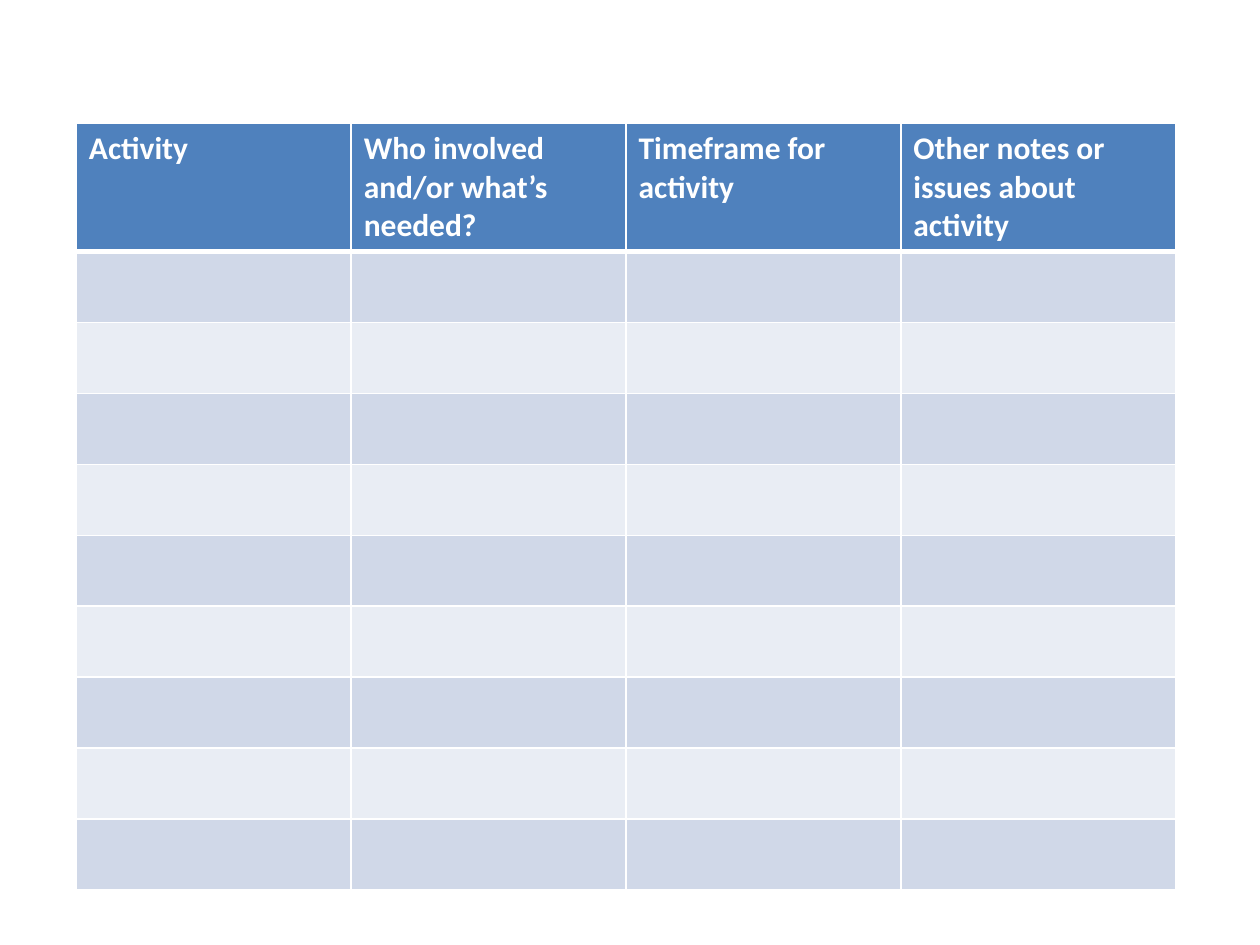
from lxml.etree import SubElement
from pptx import Presentation
from pptx.dml.color import RGBColor
from pptx.oxml.ns import qn
from pptx.util import Cm, Pt

HEADINGS = [
    "Activity",
    "Who involved and/or what’s needed?",
    "Timeframe for activity",
    "Other notes or issues about activity",
]
BODY_ROWS = 9
COLUMN_WIDTH = Cm(5.54)
HEADER_HEIGHT = Cm(2.57)
BODY_HEIGHT = Cm(1.43)
WHITE = "FFFFFF"
HEADER_FILL = "4F81BD"
BAND_FILLS = ["D0D8E8", "E9EDF4"]


def color(value):
    return RGBColor.from_string(value)


def set_borders(cell, line_color, **widths):
    """Draw the sides L, R, T and B, in that order, with widths in points."""
    properties = cell._tc.get_or_add_tcPr()
    for side, width in widths.items():
        line = SubElement(properties, qn(f"a:ln{side}"), w=str(Pt(width)))
        fill = SubElement(line, qn("a:solidFill"))
        SubElement(fill, qn("a:srgbClr"), val=line_color)


def set_fill(cell, value):
    cell.fill.solid()
    cell.fill.fore_color.rgb = color(value)


def write_text(cell, text, *, size, font_color, bold=False, font_name="Calibri"):
    paragraph = cell.text_frame.paragraphs[0]
    run = paragraph.add_run()
    run.text = text
    run.font.name = font_name
    run.font.size = Pt(size)
    run.font.bold = bold
    run.font.color.rgb = color(font_color)


def add_activity_table(slide, left, top):
    columns = len(HEADINGS)
    width = COLUMN_WIDTH * columns
    height = HEADER_HEIGHT + BODY_HEIGHT * BODY_ROWS
    table = slide.shapes.add_table(
        BODY_ROWS + 1, columns, left, top, width, height
    ).table
    for column in table.columns:
        column.width = COLUMN_WIDTH

    for index, row in enumerate(table.rows):
        is_header = index == 0
        row.height = HEADER_HEIGHT if is_header else BODY_HEIGHT
        fill = HEADER_FILL if is_header else BAND_FILLS[(index - 1) % 2]
        top_width = 3 if index == 1 else 1
        bottom_width = 3 if is_header else 1
        for cell in row.cells:
            set_borders(cell, WHITE, L=1, R=1, T=top_width, B=bottom_width)
            set_fill(cell, fill)

    for cell, heading in zip(table.rows[0].cells, HEADINGS):
        write_text(cell, heading, size=18, font_color=WHITE, bold=True)


def main():
    presentation = Presentation()
    presentation.slide_width = Cm(25.4)
    presentation.slide_height = Cm(19.05)
    blank_layout = presentation.slide_layouts[6]
    slide = presentation.slides.add_slide(blank_layout)
    add_activity_table(slide, Cm(1.54), Cm(2.49))
    presentation.save("out.pptx")


if __name__ == "__main__":
    main()
